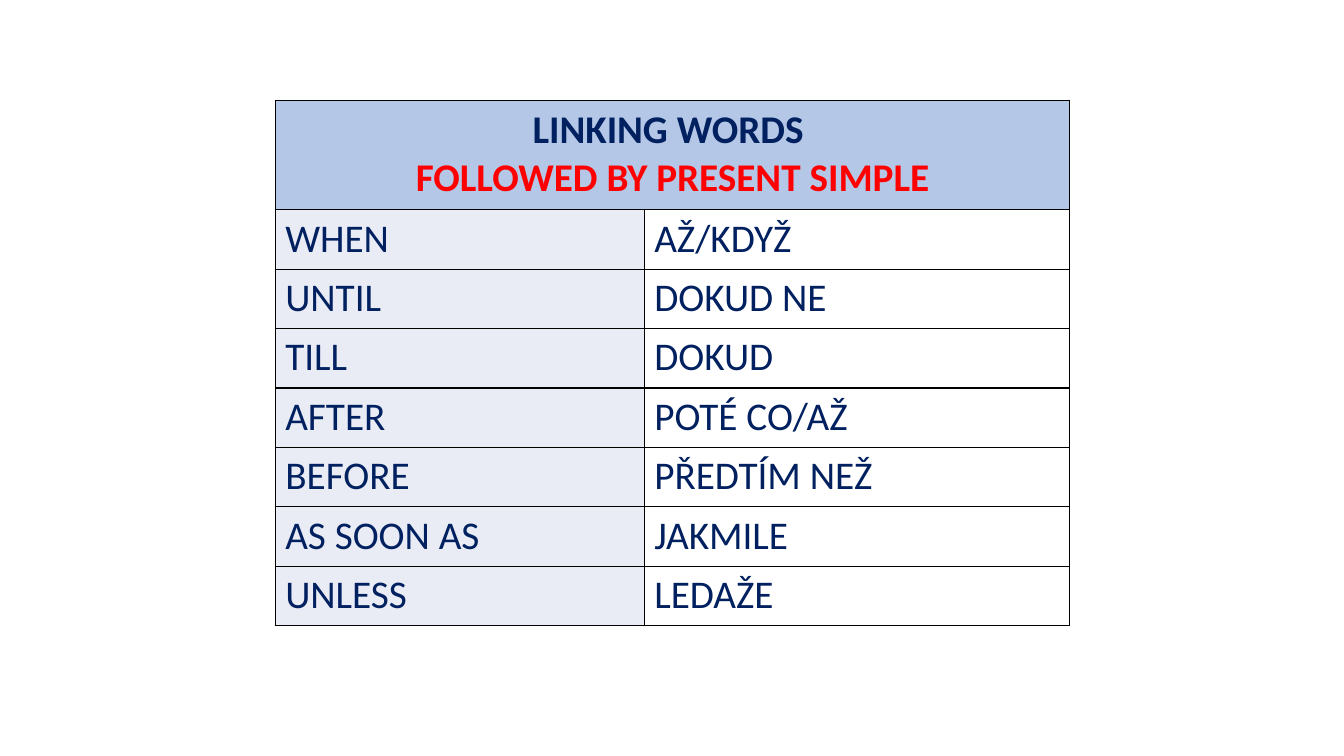
from dataclasses import dataclass

from lxml import etree
from pptx import Presentation
from pptx.dml.color import RGBColor
from pptx.enum.text import PP_ALIGN
from pptx.oxml.ns import qn
from pptx.util import Emu, Pt

LEFT = PP_ALIGN.LEFT
CENTER = PP_ALIGN.CENTER
EMU_PER_PX = 9144
BLANK_LAYOUT = 6


@dataclass(frozen=True)
class Theme:
    font: str = "Calibri"
    size: int = 28
    navy: str = "002060"
    red: str = "FF0000"
    heading_fill: str = "B4C7E7"
    english_fill: str = "E9EBF5"
    czech_fill: str = "FFFFFF"
    border: str = "000000"
    border_width: int = 1


HEADING = ("LINKING WORDS ", "FOLLOWED BY PRESENT SIMPLE")
LINKING_WORDS = (
    ("WHEN", "AŽ/KDYŽ"),
    ("UNTIL", "DOKUD NE"),
    ("TILL", "DOKUD"),
    ("AFTER", "POTÉ CO/AŽ"),
    ("BEFORE", "PŘEDTÍM NEŽ"),
    ("AS SOON AS", "JAKMILE"),
    ("UNLESS", "LEDAŽE"),
)


def px(length):
    return Emu(length * EMU_PER_PX)


class SlideBuilder:
    def __init__(self, slide, theme):
        self.slide = slide
        self.theme = theme

    def table(self, left, top, widths, heights):
        grid = self.slide.shapes.add_table(
            len(heights), len(widths), px(left), px(top),
            px(sum(widths)), px(sum(heights)),
        ).table
        for column, width in zip(grid.columns, widths):
            column.width = px(width)
        for row, height in zip(grid.rows, heights):
            row.height = px(height)
        for cell in grid.iter_cells():
            self.borders(cell)
        return grid

    def borders(self, cell):
        properties = cell._tc.get_or_add_tcPr()
        for side in ("a:lnL", "a:lnR", "a:lnT", "a:lnB"):
            line = etree.SubElement(
                properties, qn(side), w=str(Pt(self.theme.border_width)))
            fill = etree.SubElement(line, qn("a:solidFill"))
            etree.SubElement(fill, qn("a:srgbClr"), val=self.theme.border)

    def cell(self, cell, lines, fill, align=LEFT, bold=False):
        cell.fill.solid()
        cell.fill.fore_color.rgb = RGBColor.from_string(fill)
        frame = cell.text_frame
        frame.text = "\n".join(text for text, _ in lines)
        font_format = {
            "name": self.theme.font,
            "size": Pt(self.theme.size),
            "bold": bold,
        }
        for paragraph, (_, color) in zip(frame.paragraphs, lines):
            paragraph.alignment = align
            font = paragraph.runs[0].font
            for attribute, value in font_format.items():
                setattr(font, attribute, value)
            font.color.rgb = RGBColor.from_string(color)


def main():
    presentation = Presentation()
    presentation.slide_width = px(1333)
    presentation.slide_height = px(750)
    slide = presentation.slides.add_slide(
        presentation.slide_layouts[BLANK_LAYOUT])
    theme = Theme()
    builder = SlideBuilder(slide, theme)

    vocabulary = builder.table(
        273, 100, (366, 422), [108] + [59] * len(LINKING_WORDS))
    heading = vocabulary.cell(0, 0)
    heading.merge(vocabulary.cell(0, 1))
    builder.cell(
        heading, list(zip(HEADING, (theme.navy, theme.red))),
        theme.heading_fill, CENTER, True)

    language_fills = (theme.english_fill, theme.czech_fill)
    for row, translations in enumerate(LINKING_WORDS, 1):
        for column, (word, fill) in enumerate(zip(translations, language_fills)):
            builder.cell(
                vocabulary.cell(row, column), [(word, theme.navy)], fill)

    presentation.save("out.pptx")


if __name__ == "__main__":
    main()
